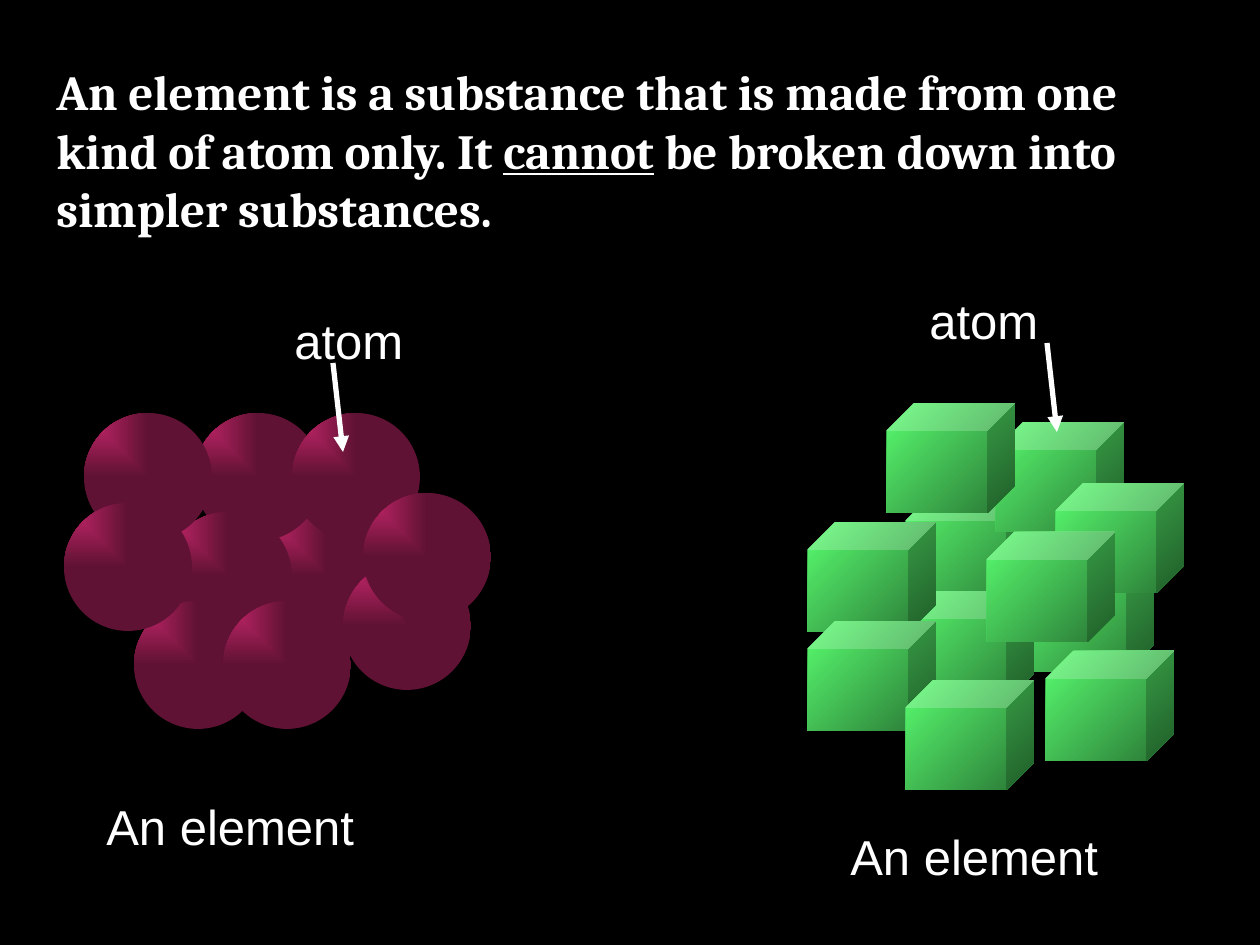
import pptx
import pptx.dml.color
import pptx.enum.shapes
import pptx.enum.text
import pptx.oxml
import pptx.oxml.ns
import pptx.util

PX = 914400 / 126
WHITE = "FFFFFF"
SHAPES = pptx.enum.shapes.MSO_SHAPE
NAMESPACE = pptx.oxml.ns.nsdecls("a")

SPHERE = {
    "preset": SHAPES.OVAL, "size": (128, 128), "colors": ("CD276E", "5F1233"),
    "shade": '<a:path path="rect"><a:fillToRect r="100000" b="100000"/></a:path>',
}
CUBE = {
    "preset": SHAPES.CUBE, "size": (128, 110), "colors": ("59FD70", "297534"),
    "shade": '<a:lin ang="2700000" scaled="1"/>',
}
# Atom positions within each cluster, from back to front
SPHERE_SPOTS = [(199, 99), (130, 0), (228, 0), (100, 99), (70, 188),
                (159, 188), (279, 149), (299, 80), (20, 0), (0, 90)]
CUBE_SPOTS = [(98, 90), (188, 19), (218, 159), (98, 188), (248, 80), (79, 0),
              (0, 119), (0, 218), (98, 277), (238, 248), (179, 129)]


def px(value):
    return pptx.util.Emu(round(value * PX))


def color(hex_string):
    return pptx.dml.color.RGBColor.from_string(hex_string)


def add_text(slide, box, runs, font_name, bold=False):
    """Runs are pairs of wording and underline."""
    text_box = slide.shapes.add_textbox(*map(px, box))
    text_box.text_frame.word_wrap = True
    paragraph = text_box.text_frame.paragraphs[0]
    for wording, underline in runs:
        run = paragraph.add_run()
        run.text = wording
        if underline:
            run.font.underline = True
    paragraph.font.name = font_name
    paragraph.font.size = pptx.util.Pt(28)
    paragraph.font.bold = bold
    paragraph.font.color.rgb = color(WHITE)
    return text_box


def add_label(slide, box, wording):
    label = add_text(slide, box, [(wording, False)], "Arial")
    label.text_frame.auto_size = pptx.enum.text.MSO_AUTO_SIZE.SHAPE_TO_FIT_TEXT


def add_atom(slide, left, top, style):
    width, height = style["size"]
    atom = slide.shapes.add_shape(style["preset"], px(left), px(top), px(width), px(height))
    atom.shadow.inherit = False
    atom.line.fill.background()
    start, end = style["colors"]
    gradient = pptx.oxml.parse_xml(
        f'<a:gradFill {NAMESPACE} rotWithShape="1"><a:gsLst>'
        f'<a:gs pos="0"><a:srgbClr val="{start}"/></a:gs>'
        f'<a:gs pos="100000"><a:srgbClr val="{end}"/></a:gs>'
        f'</a:gsLst>{style["shade"]}</a:gradFill>')
    properties = atom.element.spPr
    properties.find(pptx.oxml.ns.qn("a:prstGeom")).addnext(gradient)


def add_arrow(slide, left, top):
    arrow = slide.shapes.add_connector(
        pptx.enum.shapes.MSO_CONNECTOR.STRAIGHT,
        px(left), px(top), px(left + 10), px(top + 89))
    arrow.line.color.rgb = color(WHITE)
    arrow.line.width = pptx.util.Pt(3)
    arrow.line._get_or_add_ln().append(
        pptx.oxml.parse_xml(f'<a:tailEnd {NAMESPACE} type="triangle"/>'))
    arrow.element.spPr.append(pptx.oxml.parse_xml(f"<a:effectLst {NAMESPACE}/>"))


def add_element(slide, box, style, spots, cluster_top, label_left, label_width, arrow_left):
    """A cluster of atoms with a pointer to one atom above and a caption below."""
    left, top, _, height = box
    for x, y in spots:
        add_atom(slide, left + x, top + cluster_top + y, style)
    add_label(slide, (left + 30, top + height - 72, 297, 72), "An element")
    add_label(slide, (left + label_left, top, label_width, 72), "atom")
    add_arrow(slide, left + arrow_left, top + 59)


def main():
    presentation = pptx.Presentation()
    presentation.slide_width = px(1260)
    presentation.slide_height = px(945)
    slide = presentation.slides.add_slide(presentation.slide_layouts[6])
    slide.background.fill.solid()
    slide.background.fill.fore_color.rgb = color("000000")

    # Definition
    add_text(slide, (44, 55, 1150, 218), [
        ("An element is a substance that is made from one kind of atom only. It ", False),
        ("cannot", True),
        (" be broken down into simpler substances.", False),
    ], "Cambria", bold=True)

    # Two example elements
    add_element(slide, (64, 304, 427, 558), SPHERE, SPHERE_SPOTS,
                cluster_top=109, label_left=218, label_width=159, arrow_left=269)
    add_element(slide, (808, 284, 376, 608), CUBE, CUBE_SPOTS,
                cluster_top=119, label_left=109, label_width=179, arrow_left=239)

    presentation.save("out.pptx")


if __name__ == "__main__":
    main()
